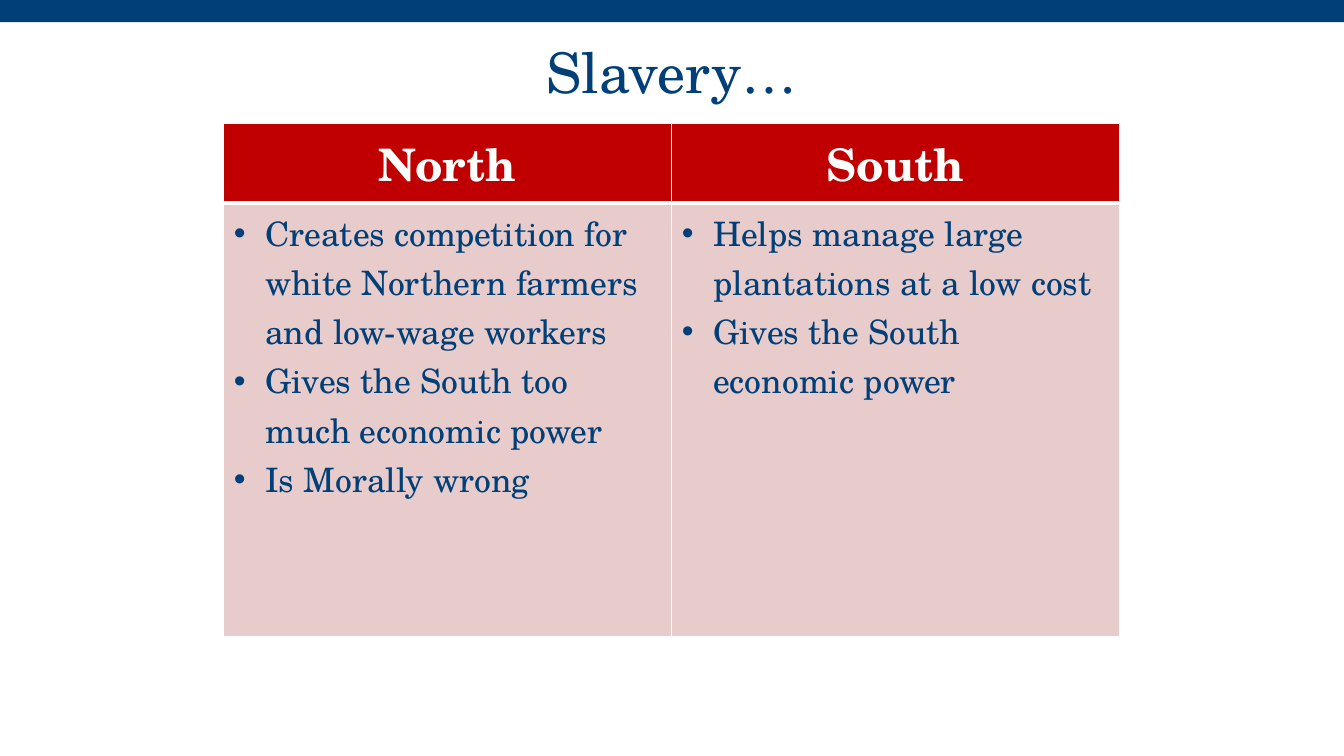
import pptx
import pptx.dml.color
import pptx.enum.shapes
import pptx.enum.text
import pptx.oxml
import pptx.oxml.ns
import pptx.util
from pptx.util import Cm

FONT = "TeX Gyre Schola"
COLOURS = {"navy": "003F77", "red": "C00000", "pink": "E8CCCC", "white": "FFFFFF"}
ALIGN = pptx.enum.text.PP_ALIGN
VIEWS = {
    "North": [
        "Creates competition for white Northern farmers and low-wage workers",
        "Gives the South too much economic power",
        "Is Morally wrong",
    ],
    "South": [
        "Helps manage large plantations at a low cost",
        "Gives the South economic power",
    ],
}


def colour(name):
    """Return the named colour as an RGB value."""
    return pptx.dml.color.RGBColor.from_string(COLOURS[name])


def paint(fill, name):
    """Make a fill solid in the named colour."""
    fill.solid()
    fill.fore_color.rgb = colour(name)


def add_bullet(para, indent):
    """Give a paragraph a round bullet with a hanging indent."""
    props = para._p.get_or_add_pPr()
    props.set("marL", str(indent))
    props.set("indent", str(-indent))
    for tag, key, value in (("buFont", "typeface", "Arial"), ("buChar", "char", "•")):
        props.append(pptx.oxml.parse_xml(
            f'<a:{tag} {pptx.oxml.ns.nsdecls("a")} {key}="{value}"/>'))


def write(frame, lines, size, ink, align=ALIGN.LEFT, bold=False, spacing=None, bullet=None):
    """Fill a text frame with one formatted paragraph for each line."""
    frame.word_wrap = True
    for number, line in enumerate(lines):
        para = frame.add_paragraph() if number else frame.paragraphs[0]
        para.alignment = align
        if spacing:
            para.line_spacing = spacing
        if bullet:
            add_bullet(para, bullet)
        span = para.add_run()
        span.text = line
        span.font.name = FONT
        span.font.size = pptx.util.Pt(size)
        span.font.bold = bold
        span.font.color.rgb = colour(ink)


def add_borders(cell, **widths):
    """Draw white cell borders with the given widths in points."""
    for side in "LRTB":
        width = pptx.util.Pt(widths.get(side, 1))
        cell._tc.get_or_add_tcPr().append(pptx.oxml.parse_xml(
            f'<a:ln{side} {pptx.oxml.ns.nsdecls("a")} w="{width}"><a:solidFill>'
            f'<a:srgbClr val="{COLOURS["white"]}"/></a:solidFill></a:ln{side}>'))


def add_band(page, left, top, width, height):
    """Place the plain band along the top edge."""
    band = page.shapes.add_shape(
        pptx.enum.shapes.MSO_SHAPE.RECTANGLE, left, top, width, height)
    band.shadow.inherit = False
    paint(band.fill, "navy")
    band.line.fill.background()


def add_title(page, left, top, width, height):
    """Place and fill the title."""
    title = page.shapes.title
    title.left, title.top, title.width, title.height = left, top, width, height
    title.text_frame.vertical_anchor = pptx.enum.text.MSO_ANCHOR.MIDDLE
    write(title.text_frame, ["Slavery…"], 40, "navy", align=ALIGN.CENTER, spacing=0.9)


def add_views(page, left, top, width, height):
    """Place the table that compares the regions."""
    table = page.shapes.add_table(2, len(VIEWS), left, top, width, height).table
    table.rows[0].height = Cm(1.7)
    table.rows[1].height = height - Cm(1.7)
    for column, (region, points) in enumerate(VIEWS.items()):
        table.columns[column].width = width // len(VIEWS)
        head, body = table.cell(0, column), table.cell(1, column)
        add_borders(head, B=3)
        paint(head.fill, "red")
        write(head.text_frame, [region], 32, "white", align=ALIGN.CENTER, bold=True)
        add_borders(body, T=3)
        paint(body.fill, "pink")
        write(body.text_frame, points, 24, "navy", bullet=Cm(0.79))


def main():
    """Build the deck and save it."""
    deck = pptx.Presentation()
    deck.slide_width, deck.slide_height = Cm(33.87), Cm(19.05)
    page = deck.slides.add_slide(deck.slide_layouts[5])
    paint(page.background.fill, "white")
    add_band(page, 0, 0, deck.slide_width, Cm(0.56))
    add_title(page, Cm(2.33), Cm(0.66), Cm(29.21), Cm(2.46))
    add_views(page, Cm(5.64), Cm(3.12), Cm(22.58), Cm(12.62))
    deck.save("out.pptx")


if __name__ == "__main__":
    main()
